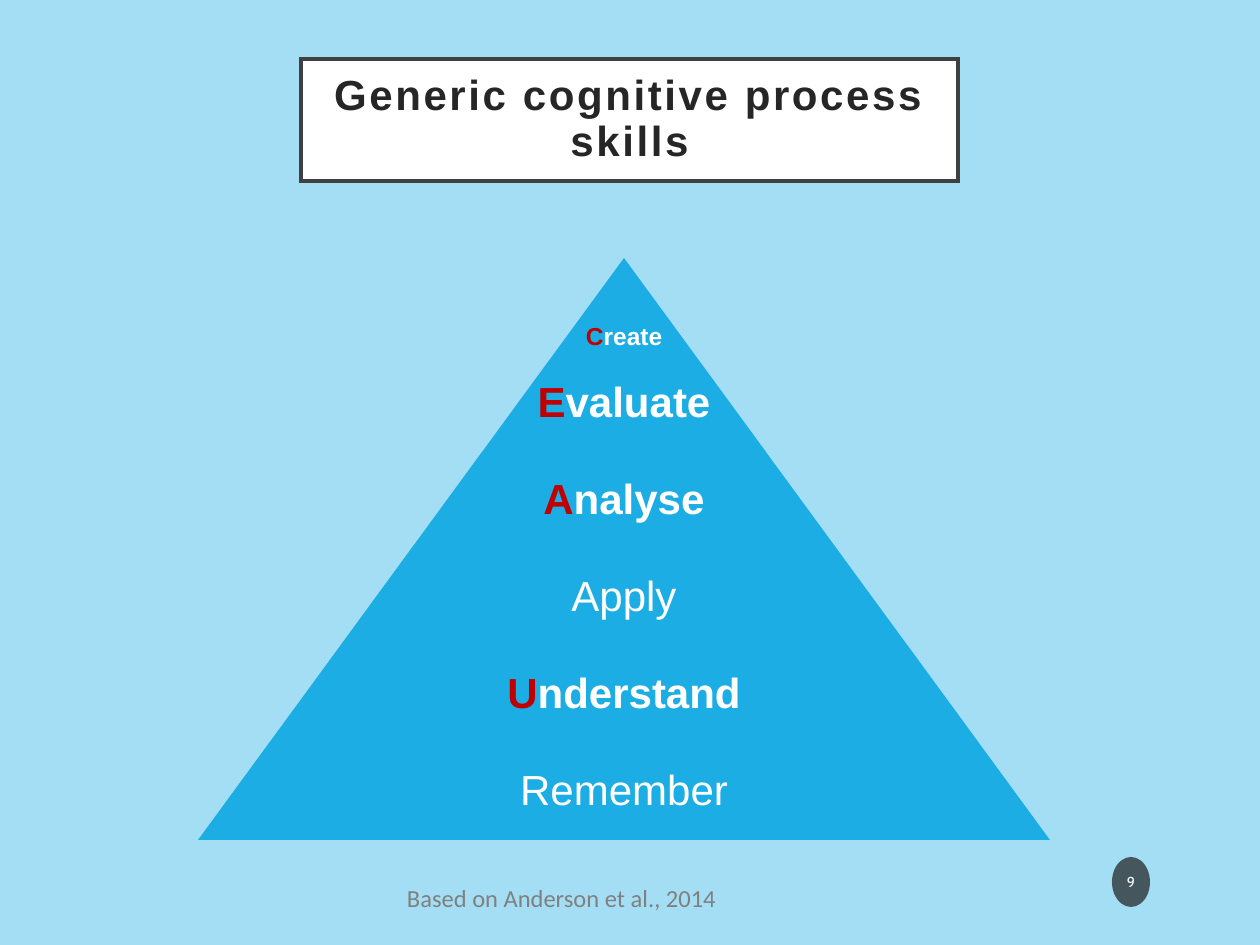
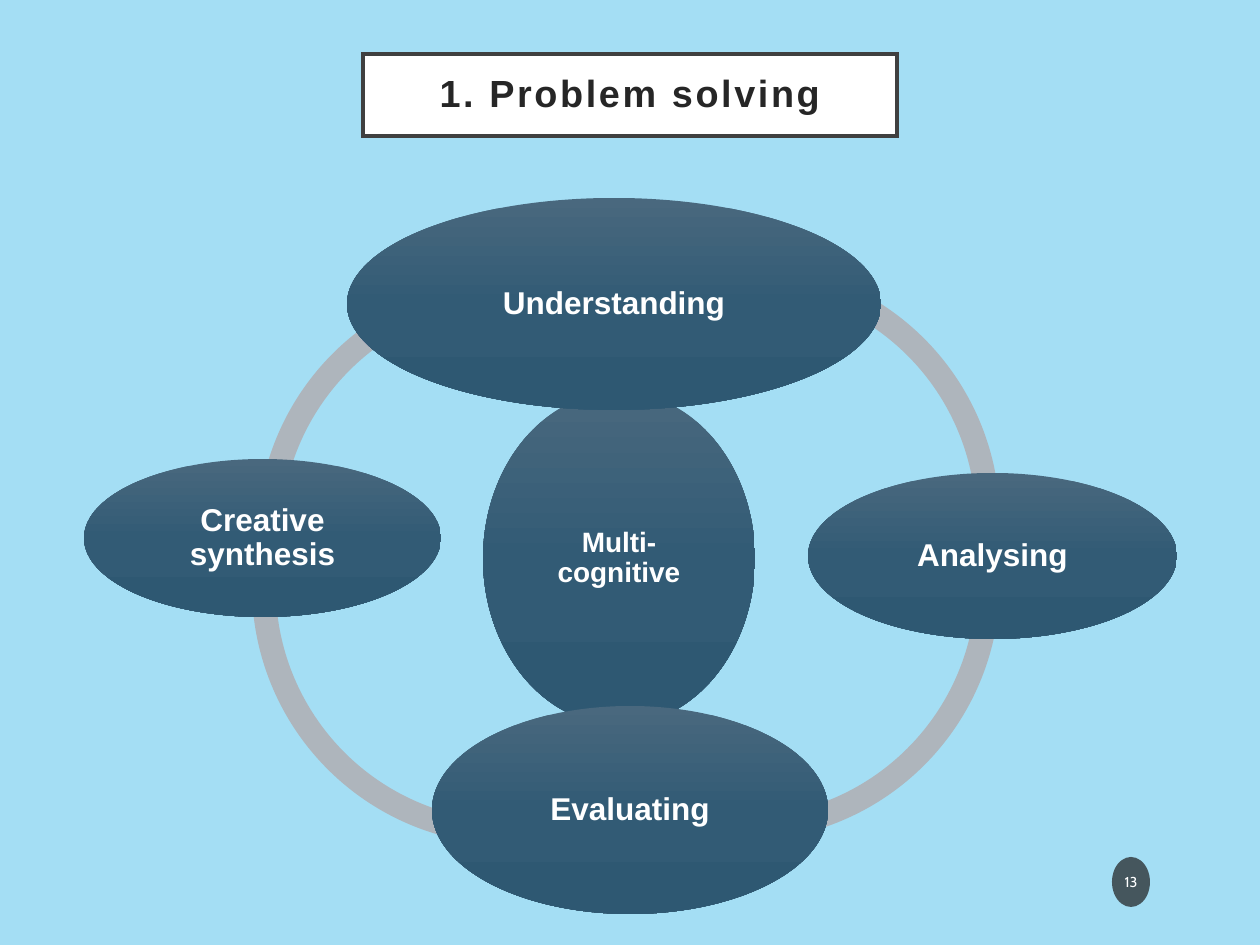
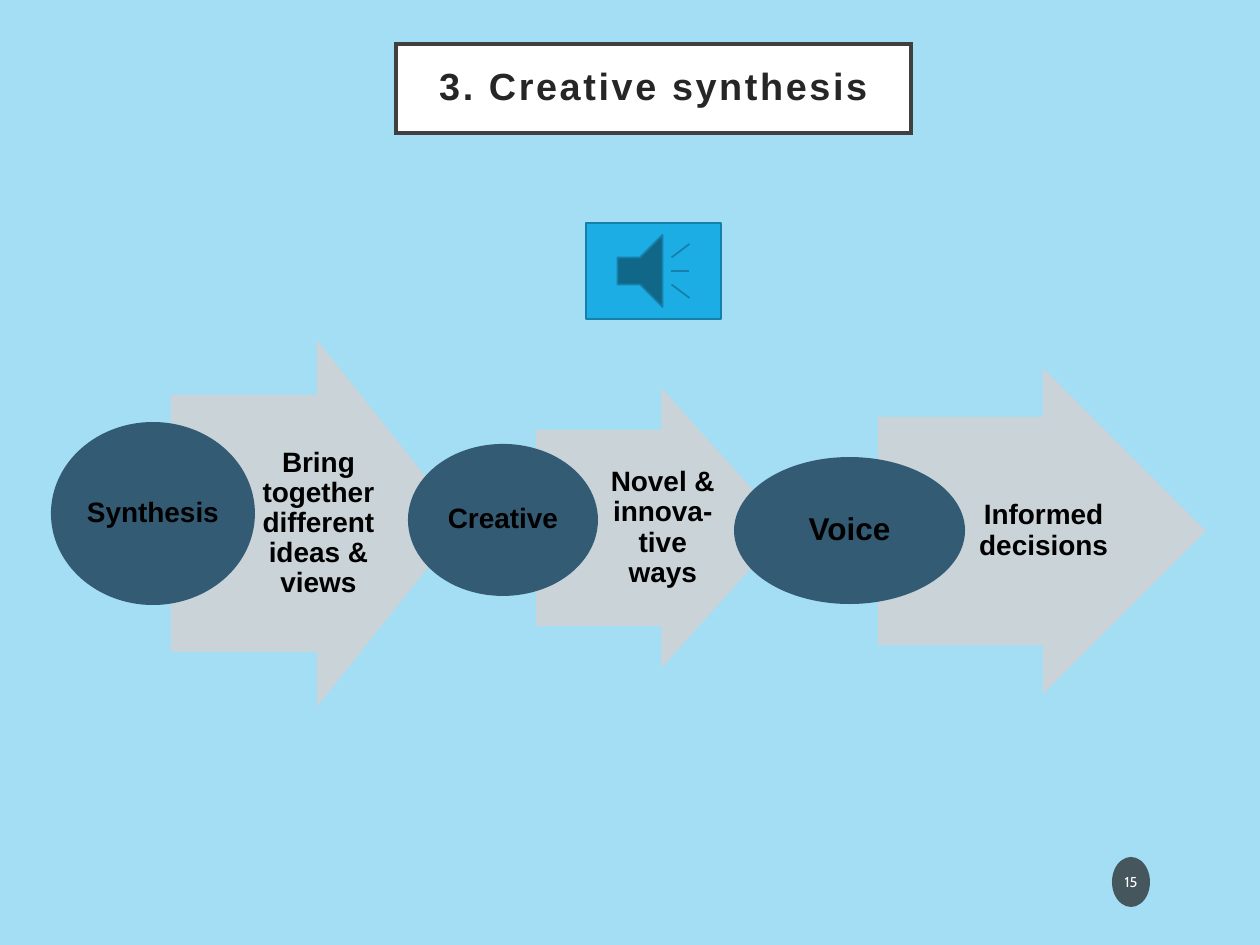
"""Build three slides on cognitive skills: a pyramid, a cycle and a chain of arrows."""
from copy import deepcopy

from lxml.etree import SubElement
from pptx import Presentation
from pptx.dml.color import RGBColor
from pptx.enum.shapes import MSO_SHAPE
from pptx.enum.text import MSO_ANCHOR, MSO_AUTO_SIZE, PP_ALIGN
from pptx.oxml.ns import qn
from pptx.util import Emu, Pt

PX_PER_INCH = 126
SKY, WHITE, BLACK = "A4DEF4", "FFFFFF", "000000"
BLUE, DARK_BLUE, STEEL = "1CADE4", "1580A9", "335B74"
RED, GREY, FRAME, TITLE_INK = "C00000", "808080", "404040", "262626"
BADGE, ARC, ARROW = "1D1D1D", "AEB5BC", "CED2D6"
OVAL_GRADIENT = [(0, "49687E"), (0.5, "325B75"), (1, "2E5872")]

PYRAMID = {
    "title": "Generic cognitive process skills", "title_box": (301, 59, 657, 122),
    "title_size": 24, "number": 9,
    "levels": ["Create", "Evaluate", "Analyse", "Apply", "Understand", "Remember"],
    "plain_levels": ["Apply", "Remember"],
    "source": "Based on Anderson et al., 2014", "source_box": (394, 877, 442, 43),
}
CYCLE = {
    "title": "1. Problem solving", "title_box": (363, 54, 534, 82),
    "title_size": 21.6, "number": 13,
    "arcs": [
        (257, 278, 179.74, 292.95),
        (252, 328, 61.81, 191.14),
        (483, 324, 354, 116.02),
        (483, 263, 239.61, 7.71),
    ],
    "ovals": [
        ("Multi-cognitive", 16, (483, 392, 272, 333)),
        ("Understanding", 18, (347, 198, 534, 212)),
        ("Analysing", 18, (808, 473, 369, 166)),
        ("Evaluating", 18, (432, 706, 396, 208)),
        ("Creative synthesis", 18, (84, 459, 357, 158)),
    ],
}
CHAIN = {
    "title": "3. Creative synthesis", "title_box": (396, 44, 515, 89),
    "title_size": 21.6, "number": 15,
    "steps": [
        ("Synthesis", 16, (51, 422, 204, 183),
         "Bring together different ideas & views", (171, 340, 292, 367)),
        ("Creative", 16, (408, 444, 190, 152),
         "Novel & innova-tive ways", (536, 388, 251, 280)),
        ("Voice", 18, (734, 457, 231, 147),
         "Informed decisions", (878, 368, 328, 326)),
    ],
    "sound_box": (586, 223, 135, 96),
}

NUMBER_BOX = (1112, 857, 38, 50)
PYRAMID_CENTRE, PYRAMID_TOP, LEVEL_HEIGHT, LEVEL_SLOPE = 624, 258, 97, 71
LEVEL_TEXT_SIZE, TIP_TEXT_SIZE = 24, 14
ARC_SIZE, ARC_THICKNESS = 517, 0.046
ADJUSTMENT_PER_DEGREE = 0.6


def px(length):
    """Turn pixels into EMU."""
    return Emu(round(length * 914400 / PX_PER_INCH))


def colour(value):
    """Turn a hex string into a colour."""
    return RGBColor.from_string(value)


def write(shape, text, size, ink, font="Arial", bold=False, initial=None, align=PP_ALIGN.CENTER,
          anchor=MSO_ANCHOR.MIDDLE, insets=(4, 4), leading=0.9, tracking=None, wrap=True):
    """Put formatted text in a shape, with its first letter in another colour if asked."""
    frame = shape.text_frame
    frame.auto_size, frame.word_wrap = MSO_AUTO_SIZE.NONE, wrap
    frame.vertical_anchor = anchor
    frame.margin_left = frame.margin_right = px(insets[0])
    frame.margin_top = frame.margin_bottom = px(insets[1])
    paragraph = frame.paragraphs[0]
    paragraph.alignment, paragraph.line_spacing = align, leading
    pieces = [(text[0], initial), (text[1:], ink)] if initial else [(text, ink)]
    for piece, piece_ink in pieces:
        run = paragraph.add_run()
        run.text = piece
        run.font.name, run.font.size, run.font.bold = font, Pt(size), bold
        run.font.color.rgb = colour(piece_ink)
        if tracking:
            run.font._element.set("spc", str(tracking))


def add_text(slide, box, text, size, ink, **style):
    """Add a text box."""
    write(slide.shapes.add_textbox(*map(px, box)), text, size, ink, **style)


def add_figure(slide, preset, box, fill, line=None, opacity=None, adjustments=()):
    """Add a preset shape with a flat fill, or a vertical gradient given as a list of stops."""
    shape = slide.shapes.add_shape(preset, *map(px, box))
    shape.shadow.inherit = False
    for index, value in enumerate(adjustments):
        shape.adjustments[index] = value
    if isinstance(fill, list):
        shape.fill.gradient()
        shape.fill.gradient_angle = 270
        stops = shape._element.spPr.find(".//" + qn("a:gsLst"))
        stops.append(deepcopy(stops[0]))
        for stop, (position, value) in zip(shape.fill.gradient_stops, fill):
            stop.position, stop.color.rgb = position, colour(value)
    else:
        shape.fill.solid()
        shape.fill.fore_color.rgb = colour(fill)
    if opacity:
        solid = shape._element.spPr.find(qn("a:solidFill"))
        SubElement(solid[0], qn("a:alpha"), val=str(opacity * 1000))
    if line:
        shape.line.color.rgb, shape.line.width = colour(line), Pt(1)
    else:
        shape.line.fill.background()
    return shape


def add_slide(presentation, content):
    """Add a slide with its square-cornered title frame and number badge."""
    slide = presentation.slides.add_slide(presentation.slide_layouts[5])
    title = slide.shapes.title
    title.left, title.top, title.width, title.height = map(px, content["title_box"])
    title.fill.solid()
    title.fill.fore_color.rgb = colour(WHITE)
    title.line.color.rgb, title.line.width = colour(FRAME), Pt(2.5)
    SubElement(title._element.spPr.find(qn("a:ln")), qn("a:miter"), lim="800000")
    write(title, content["title"], content["title_size"], TITLE_INK, bold=True,
          insets=(25, 25), tracking=150)
    badge = add_figure(slide, MSO_SHAPE.OVAL, NUMBER_BOX, BADGE, opacity=70)
    write(badge, str(content["number"]), 8.2, WHITE, font="Cabin", insets=(2, 6), leading=1)
    return slide


def build_pyramid(presentation):
    """Stack the levels, each wider by the same step, with a small label low in the tip."""
    slide = add_slide(presentation, PYRAMID)
    for index, level in enumerate(PYRAMID["levels"]):
        half_width = LEVEL_SLOPE * (index + 1)
        box = (PYRAMID_CENTRE - half_width, PYRAMID_TOP + LEVEL_HEIGHT * index,
               2 * half_width, LEVEL_HEIGHT)
        add_figure(slide, MSO_SHAPE.TRAPEZOID, box, BLUE,
                   adjustments=[LEVEL_SLOPE / LEVEL_HEIGHT])
        strong = level not in PYRAMID["plain_levels"]
        is_tip = index == 0
        add_text(slide, box, level, TIP_TEXT_SIZE if is_tip else LEVEL_TEXT_SIZE, WHITE,
                 bold=strong, initial=RED if strong else None, wrap=False,
                 anchor=MSO_ANCHOR.BOTTOM if is_tip else MSO_ANCHOR.MIDDLE)
    add_text(slide, PYRAMID["source_box"], PYRAMID["source"], 14, GREY, font="Calibri",
             align=PP_ALIGN.LEFT, anchor=MSO_ANCHOR.TOP, insets=(13, 6), leading=1)


def build_cycle(presentation):
    """Draw the ring of arcs and the ovals over it."""
    slide = add_slide(presentation, CYCLE)
    for left, top, start, end in CYCLE["arcs"]:
        angles = [angle * ADJUSTMENT_PER_DEGREE for angle in (start, end)]
        add_figure(slide, MSO_SHAPE.BLOCK_ARC, (left, top, ARC_SIZE, ARC_SIZE), ARC,
                   adjustments=[*angles, ARC_THICKNESS])
    for text, size, box in CYCLE["ovals"]:
        oval = add_figure(slide, MSO_SHAPE.OVAL, box, OVAL_GRADIENT)
        write(oval, text, size, WHITE, bold=True, insets=(3, 3))


def build_chain(presentation):
    """Draw each arrow with its text and the oval at its tail."""
    slide = add_slide(presentation, CHAIN)
    for name, size, oval_box, detail, arrow_box in CHAIN["steps"]:
        add_figure(slide, MSO_SHAPE.RIGHT_ARROW, arrow_box, ARROW, opacity=90,
                   adjustments=[0.7, 0.5])
        left, top, width, height = arrow_box
        detail_box = (left + width * 0.26, top + height * 0.15, width * 0.49, height * 0.7)
        add_text(slide, detail_box, detail, 16, BLACK, bold=True, insets=(3, 1))
        oval = add_figure(slide, MSO_SHAPE.OVAL, oval_box, STEEL)
        write(oval, name, size, BLACK, bold=True, insets=(1, 1))
    add_figure(slide, MSO_SHAPE.ACTION_BUTTON_SOUND, CHAIN["sound_box"], BLUE, line=DARK_BLUE)


def main():
    """Build and save the presentation."""
    presentation = Presentation()
    presentation.slide_width, presentation.slide_height = px(1260), px(945)
    background = presentation.slide_master.background.fill
    background.solid()
    background.fore_color.rgb = colour(SKY)
    build_pyramid(presentation)
    build_cycle(presentation)
    build_chain(presentation)
    presentation.save("out.pptx")


if __name__ == "__main__":
    main()
